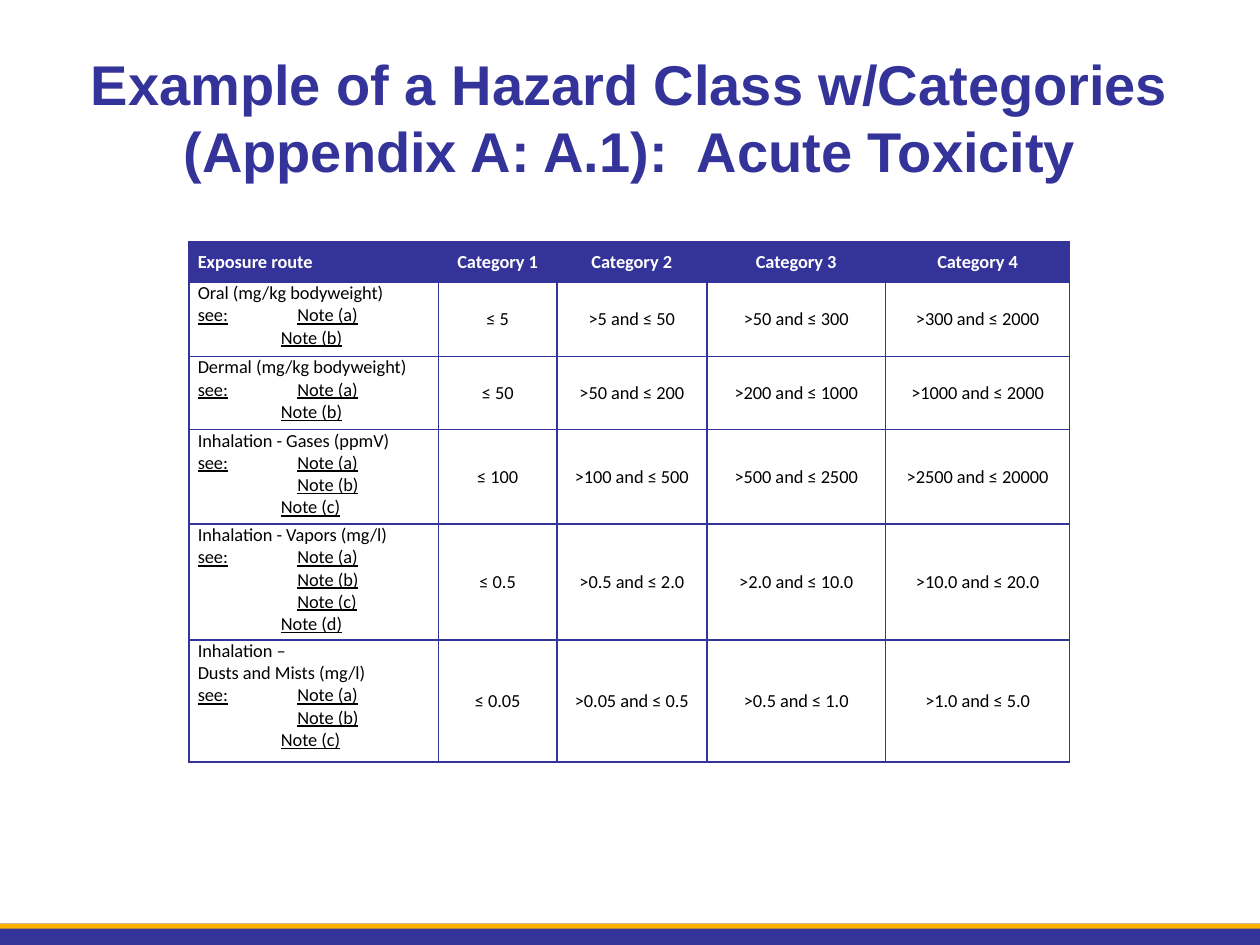
from lxml import etree
from pptx import Presentation
from pptx.dml.color import RGBColor
from pptx.enum.shapes import MSO_SHAPE
from pptx.enum.text import MSO_ANCHOR, PP_ALIGN
from pptx.oxml.ns import qn
from pptx.util import Inches, Pt

BLUE = RGBColor(0x33, 0x33, 0x99)
GOLD = RGBColor(0xFF, 0xB3, 0x00)
WHITE = RGBColor(0xFF, 0xFF, 0xFF)
BLACK = RGBColor(0, 0, 0)
RECT = MSO_SHAPE.RECTANGLE
MIDDLE, TOP = MSO_ANCHOR.MIDDLE, MSO_ANCHOR.TOP
CENTER, LEFT = PP_ALIGN.CENTER, PP_ALIGN.LEFT

NOTE_TAB = Inches(0.79)
LAST_TAB = Inches(0.66)

HEADS = ["Exposure route", "Category 1", "Category 2", "Category 3", "Category 4"]
# Each route: heading lines, note letters, limits by category
ROUTES = [
    (["Oral (mg/kg bodyweight)"], "ab",
     ["≤ 5", ">5 and ≤ 50", ">50 and ≤ 300", ">300 and ≤ 2000"]),
    (["Dermal (mg/kg bodyweight)"], "ab",
     ["≤ 50", ">50 and ≤ 200", ">200 and ≤ 1000", ">1000 and ≤ 2000"]),
    (["Inhalation - Gases (ppmV)"], "abc",
     ["≤ 100", ">100 and ≤ 500", ">500 and ≤ 2500", ">2500 and ≤ 20000"]),
    (["Inhalation - Vapors (mg/l)"], "abcd",
     ["≤ 0.5", ">0.5 and ≤ 2.0", ">2.0 and ≤ 10.0", ">10.0 and ≤ 20.0"]),
    (["Inhalation –", "Dusts and Mists (mg/l)"], "abc",
     ["≤ 0.05", ">0.05 and ≤ 0.5", ">0.5 and ≤ 1.0", ">1.0 and ≤ 5.0"]),
]
WIDTHS = [1.98, 0.94, 1.19, 1.42, 1.46]
HEIGHTS = [0.32, 0.59, 0.58, 0.75, 0.92, 0.97]


def style_cell(cell, color, align, anchor):
    """Set the margins, borders and font of a filled-in cell."""
    cell.margin_left = cell.margin_right = Inches(0.07)
    cell.margin_top = cell.margin_bottom = 0
    cell.vertical_anchor = anchor
    props = cell._tc.get_or_add_tcPr()
    for spot, side in enumerate(("a:lnL", "a:lnR", "a:lnT", "a:lnB")):
        line = etree.Element(qn(side), w=str(Pt(1)))
        fill = etree.SubElement(line, qn("a:solidFill"))
        etree.SubElement(fill, qn("a:srgbClr"), val=str(BLUE))
        props.insert(spot, line)
    for para in cell.text_frame.paragraphs:
        para.alignment = align
        para.font.name = "Calibri"
        para.font.size = Pt(10.5)
        para.font.color.rgb = color


def add_note(frame, letter, first, last):
    """Add one underlined note line; the first one follows "see:" and a tab."""
    para = frame.add_paragraph()
    props = para._p.get_or_add_pPr()
    if first:
        tabs = etree.SubElement(props, qn("a:tabLst"))
        etree.SubElement(tabs, qn("a:tab"), pos=str(NOTE_TAB), algn="l")
        lead = para.add_run()
        lead.text = "see:"
        lead.font.underline = True
        para.add_run().text = "\t"
    else:
        props.set("marL", str(LAST_TAB if last else NOTE_TAB))
        props.set("indent", "0")
    note = para.add_run()
    note.text = f"Note ({letter})"
    note.font.underline = True


prs = Presentation()
prs.slide_width, prs.slide_height = Inches(10), Inches(7.5)
slide = prs.slides.add_slide(prs.slide_layouts[5])

# Footer bars
for color, height in ((BLUE, 0.17), (GOLD, 0.04)):
    bar = slide.shapes.add_shape(RECT, 0, Inches(7.33), Inches(10), Inches(height))
    bar.shadow.inherit = False
    bar.fill.solid()
    bar.fill.fore_color.rgb = color
    bar.line.fill.background()

# Title
title = slide.shapes.title
title.left, title.top = Inches(0.5), Inches(0.3)
title.width, title.height = Inches(9), Inches(1.25)
title.text = "Example of a Hazard Class w/Categories (Appendix A: A.1):  Acute Toxicity"
title.text_frame.vertical_anchor = MIDDLE
para = title.text_frame.paragraphs[0]
para.alignment = CENTER
para.font.name = "Arial"
para.font.size = Pt(32)
para.font.bold = True
para.font.color.rgb = BLUE

# Table grid
frame = slide.shapes.add_table(len(HEIGHTS), len(WIDTHS), Inches(1.5), Inches(1.92),
                               Inches(sum(WIDTHS)), Inches(sum(HEIGHTS)))
table = frame.table
table.first_row = table.horz_banding = False
for col, width in zip(table.columns, WIDTHS):
    col.width = Inches(width)
for row, height in zip(table.rows, HEIGHTS):
    row.height = Inches(height)

# Header row
for c, head in enumerate(HEADS):
    cell = table.cell(0, c)
    cell.text = head
    cell.fill.solid()
    cell.fill.fore_color.rgb = BLUE
    style_cell(cell, WHITE, CENTER if c else LEFT, MIDDLE)
    cell.text_frame.paragraphs[0].font.bold = True

# Exposure routes with their notes and limits
for r, (lines, notes, limits) in enumerate(ROUTES, 1):
    cell = table.cell(r, 0)
    cell.text = "\n".join(lines)
    for n, letter in enumerate(notes, 1):
        add_note(cell.text_frame, letter, n == 1, n == len(notes))
    cell.fill.background()
    style_cell(cell, BLACK, LEFT, TOP)
    for c, limit in enumerate(limits, 1):
        cell = table.cell(r, c)
        cell.text = limit
        cell.fill.background()
        style_cell(cell, BLACK, CENTER, MIDDLE)

prs.save("out.pptx")
